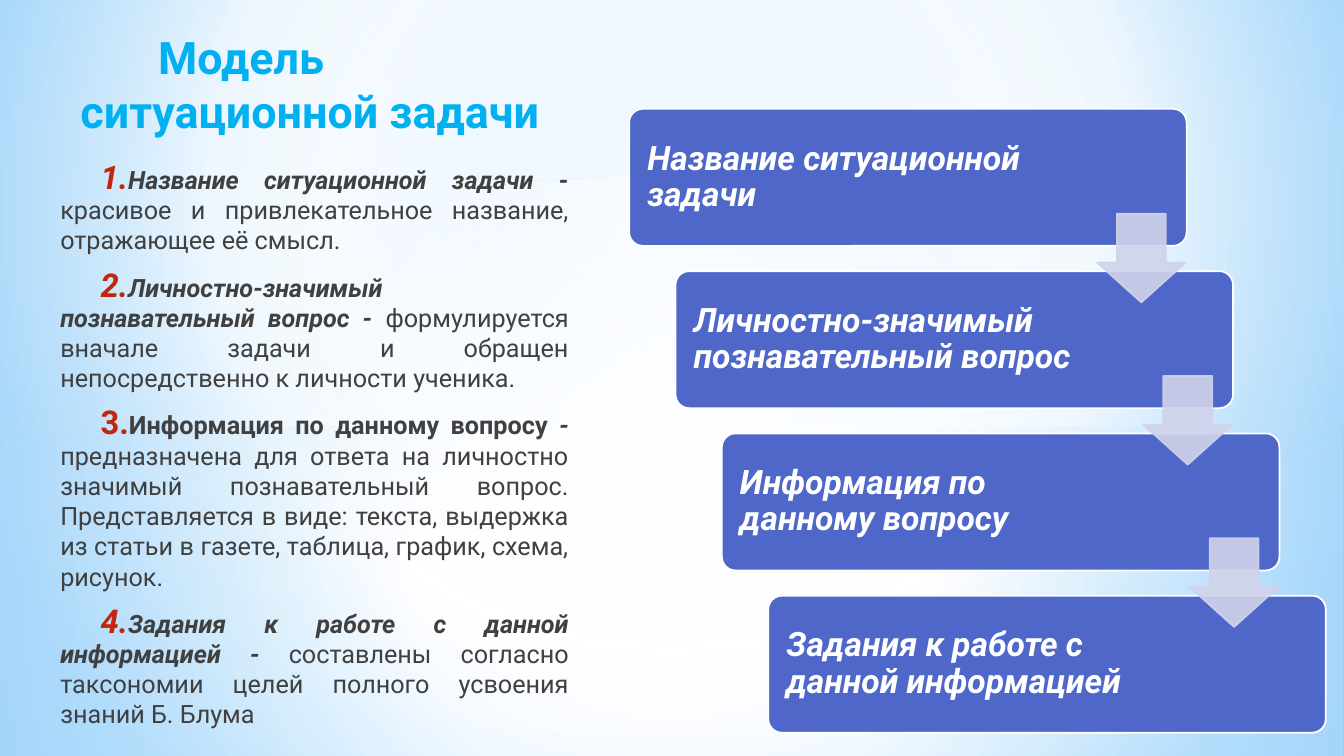
from lxml.etree import SubElement
from pptx import Presentation
from pptx.dml.color import RGBColor
from pptx.enum.shapes import MSO_SHAPE as SHAPE
from pptx.enum.text import MSO_ANCHOR as ANCHOR, PP_ALIGN as ALIGN
from pptx.oxml import parse_xml
from pptx.oxml.ns import nsdecls, qn
from pptx.util import Pt

FONT = "Roboto"
WIDTH, HEIGHT = 1333, 750

# Header and explanation of each part; header runs are (text, italic)
MODEL_PARTS = [
    ([("Название ситуационной задачи - ", True)],
     "красивое и привлекательное название, отражающее её смысл."),
    ([("Личностно-значимый познавательный вопрос - ", True)],
     "формулируется вначале задачи и обращен непосредственно к личности ученика."),
    ([("Информация по данному вопросу", False), (" - ", True)],
     "предназначена для ответа на личностно значимый познавательный вопрос. "
     "Представляется в виде: текста, выдержка из статьи в газете, таблица, "
     "график, схема, рисунок."),
    ([("Задания к работе с данной информацией - ", True)],
     "составлены согласно таксономии целей полного усвоения знаний Б. Блума"),
]
STEPS = [
    "Название ситуационной задачи",
    "Личностно-значимый познавательный вопрос",
    "Информация по данному вопросу",
    "Задания к работе с данной информацией",
]


def px(length):
    """100 px to the inch."""
    return length * 9144


def color(hex_code):
    return RGBColor.from_string(hex_code)


def style_run(run, size, hex_code, bold=False, italic=False):
    font = run.font
    font.name, font.size = FONT, Pt(size)
    font.bold, font.italic = bold, italic
    font.color.rgb = color(hex_code)


def set_opacity(fill_parent, percent):
    for rgb in fill_parent.iter(qn("a:srgbClr")):
        SubElement(rgb, qn("a:alpha"), val=str(percent * 1000))


def paint_gradient(fill, owner, stops, focus=None):
    """Radial towards focus (left, top, right, bottom in %), else top to bottom."""
    stop_xml = "".join(
        f'<a:gs pos="{place * 1000}"><a:srgbClr val="{hex_code}">'
        f'<a:alpha val="{opacity * 1000}"/></a:srgbClr></a:gs>'
        for place, hex_code, opacity in stops)
    if focus:
        sides = " ".join(f'{side}="{value * 1000}"' for side, value in zip("ltrb", focus))
        direction = f'<a:path path="circle"><a:fillToRect {sides}/></a:path>'
    else:
        direction = '<a:lin ang="5400000" scaled="0"/>'
    gradient = parse_xml(
        f'<a:gradFill {nsdecls("a")} rotWithShape="1">'
        f'<a:gsLst>{stop_xml}</a:gsLst>{direction}</a:gradFill>')
    fill.background()
    blank = next(owner.iter(qn("a:noFill")))
    blank.getparent().replace(blank, gradient)


def add_plain_shape(slide, kind, left, top, width, height):
    shape = slide.shapes.add_shape(kind, px(left), px(top), px(width), px(height))
    shape.shadow.inherit = False
    return shape


def add_text_box(slide, left, top, width, height):
    frame = slide.shapes.add_textbox(px(left), px(top), px(width), px(height)).text_frame
    frame.word_wrap = True
    return frame


def draw_backdrop(slide):
    white, sky = "FFFFFF", "B4DCFA"
    center = (50, 50, 50, 50)
    paint_gradient(slide.background.fill, slide.element,
                   [(0, "9ED5FF", 100), (60, white, 100), (100, "5BB9FF", 100)],
                   (20, 10, 20, 60))
    layers = [
        # Lower and upper halves
        (SHAPE.RECTANGLE, 423, 327, [(0, white, 92), (37, white, 77), (100, sky, 80)], center),
        (SHAPE.RECTANGLE, 0, 423, [(0, white, 90), (48, white, 63), (100, sky, 80)], center),
        # Horizon band
        (SHAPE.RECTANGLE, 290, 250,
         [(0, white, 0), (29, white, 30), (45, sky, 40),
          (55, white, 26), (65, sky, 60), (100, white, 0)], None),
        # Central glow
        (SHAPE.OVAL, 175, 558, [(0, white, 100), (54, white, 0)], center),
    ]
    for kind, top, height, stops, focus in layers:
        layer = add_plain_shape(slide, kind, 0, top, WIDTH, height)
        paint_gradient(layer.fill, layer.element, stops, focus)
        layer.line.fill.background()


def draw_title(slide, left, top, width, height):
    title = add_text_box(slide, left, top, width, height)
    title.text = "Модель\nситуационной задачи"
    for line in title.paragraphs:
        style_run(line.runs[0], 32, "00B0F0", bold=True)
    title.paragraphs[0]._p.get_or_add_pPr().set("marL", str(px(77)))


def number_paragraph(paragraph):
    props = paragraph._p.get_or_add_pPr()
    props.set("marL", str(px(20)))
    props.set("indent", str(px(40)))
    SubElement(SubElement(props, qn("a:buClr")), qn("a:srgbClr"), val="C3260C")
    SubElement(props, qn("a:buSzPct"), val="130000")
    SubElement(props, qn("a:buFont"), typeface="+mj-lt")
    SubElement(props, qn("a:buAutoNum"), type="arabicPeriod")


def draw_description(slide, left, top, width, height):
    description = add_text_box(slide, left, top, width, height)
    description.vertical_anchor = ANCHOR.BOTTOM
    for index, (header, explanation) in enumerate(MODEL_PARTS):
        item = description.add_paragraph() if index else description.paragraphs[0]
        number_paragraph(item)
        item.alignment = ALIGN.JUSTIFY
        item.space_after = Pt(3)
        if index:
            item.space_before = Pt(9)
        runs = [(text, True, italic) for text, italic in header]
        for text, bold, italic in runs + [(explanation, False, False)]:
            run = item.add_run()
            run.text = text
            style_run(run, 18, "404040", bold, italic)


def draw_step(slide, text, left, top, width, height):
    step = add_plain_shape(slide, SHAPE.ROUNDED_RECTANGLE, left, top, width, height)
    step.adjustments[0] = 0.1
    step.fill.solid()
    step.fill.fore_color.rgb = color("4E67C8")
    step.line.color.rgb = color("FFFFFF")
    step.line.width = Pt(1.25)
    frame = step.text_frame
    frame.word_wrap = True
    frame.vertical_anchor = ANCHOR.MIDDLE
    frame.margin_left = frame.margin_top = frame.margin_bottom = px(14)
    frame.margin_right = px(149)
    frame.text = text
    label = frame.paragraphs[0]
    label.alignment = ALIGN.LEFT
    label.line_spacing = 0.9
    style_run(label.runs[0], 24, "FFFFFF", bold=True, italic=True)


def draw_step_arrow(slide, left, top, size):
    arrow = add_plain_shape(slide, SHAPE.DOWN_ARROW, left, top, size, size)
    arrow.adjustments[0], arrow.adjustments[1] = 0.55, 0.45
    arrow.fill.solid()
    arrow.fill.fore_color.rgb = arrow.line.color.rgb = color("D0D3EB")
    arrow.line.width = Pt(1.25)
    set_opacity(arrow.element.spPr, 90)


def draw_staircase(slide, left, top, step_width, step_height):
    shift, drop = 46, 161
    corners = [(left + shift * i, top + drop * i) for i in range(len(STEPS))]
    for text, (x, y) in zip(STEPS, corners):
        draw_step(slide, text, x, y, step_width, step_height)
    # Arrows overlap the lower right corner of each step but the last
    for x, y in corners[:-1]:
        draw_step_arrow(slide, x + step_width - 89, y + step_height - 32, 88)


def main():
    deck = Presentation()
    deck.slide_width, deck.slide_height = px(WIDTH), px(HEIGHT)
    slide = deck.slides.add_slide(deck.slide_layouts[6])
    draw_backdrop(slide)
    draw_description(slide, 30, 200, 544, 528)
    draw_staircase(slide, 624, 108, 553, 136)
    draw_title(slide, 70, 25, 503, 118)
    deck.save("out.pptx")


if __name__ == "__main__":
    main()
